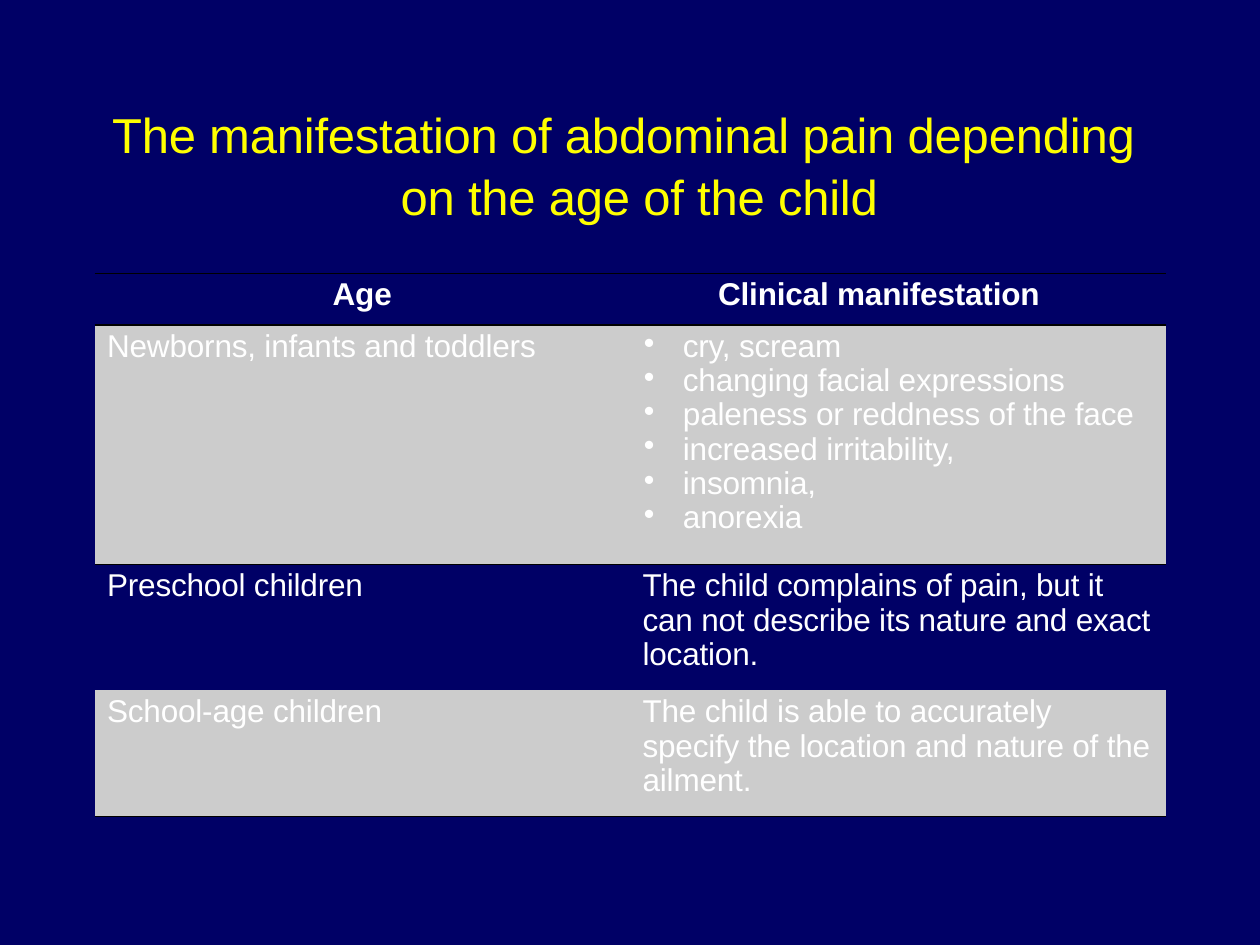
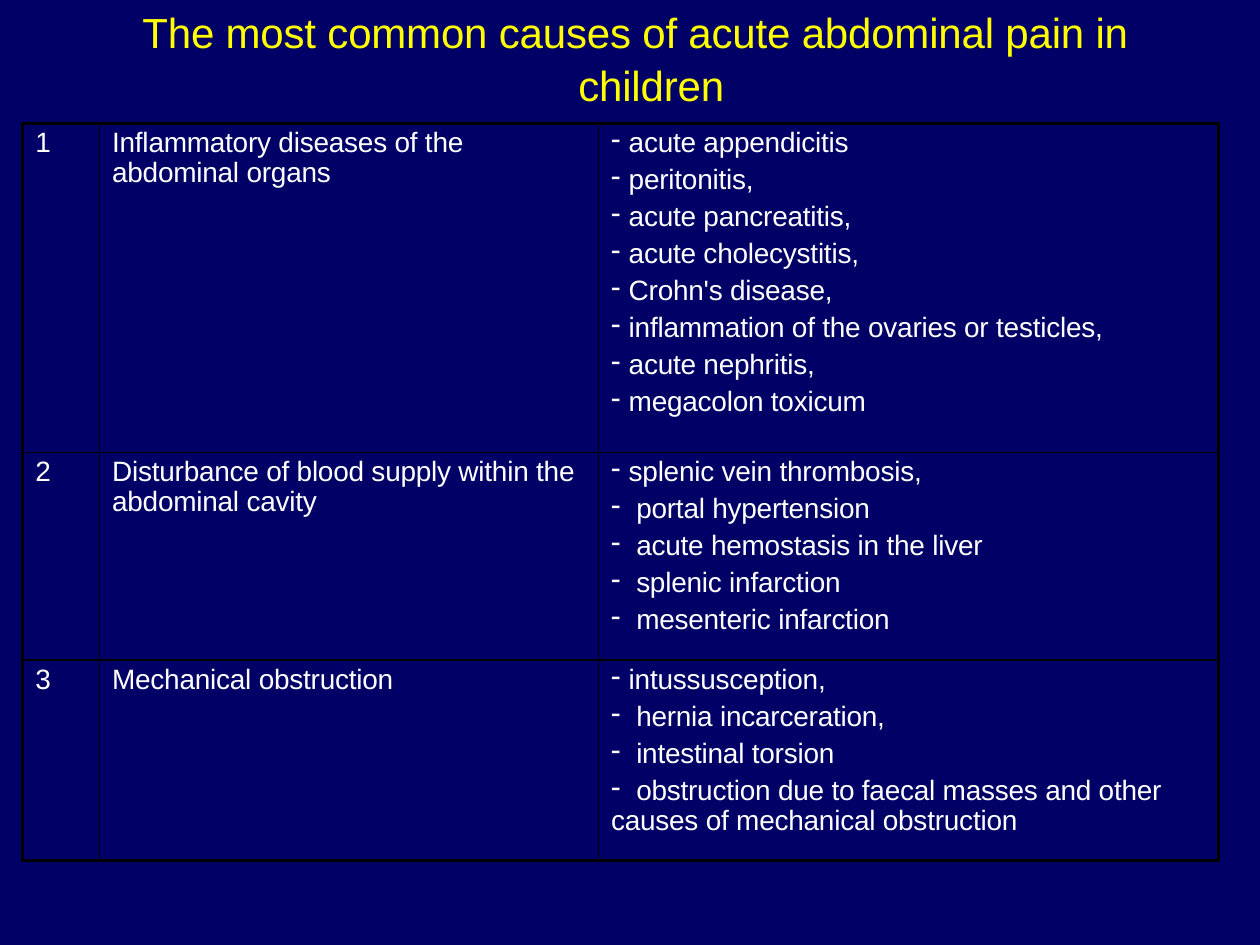
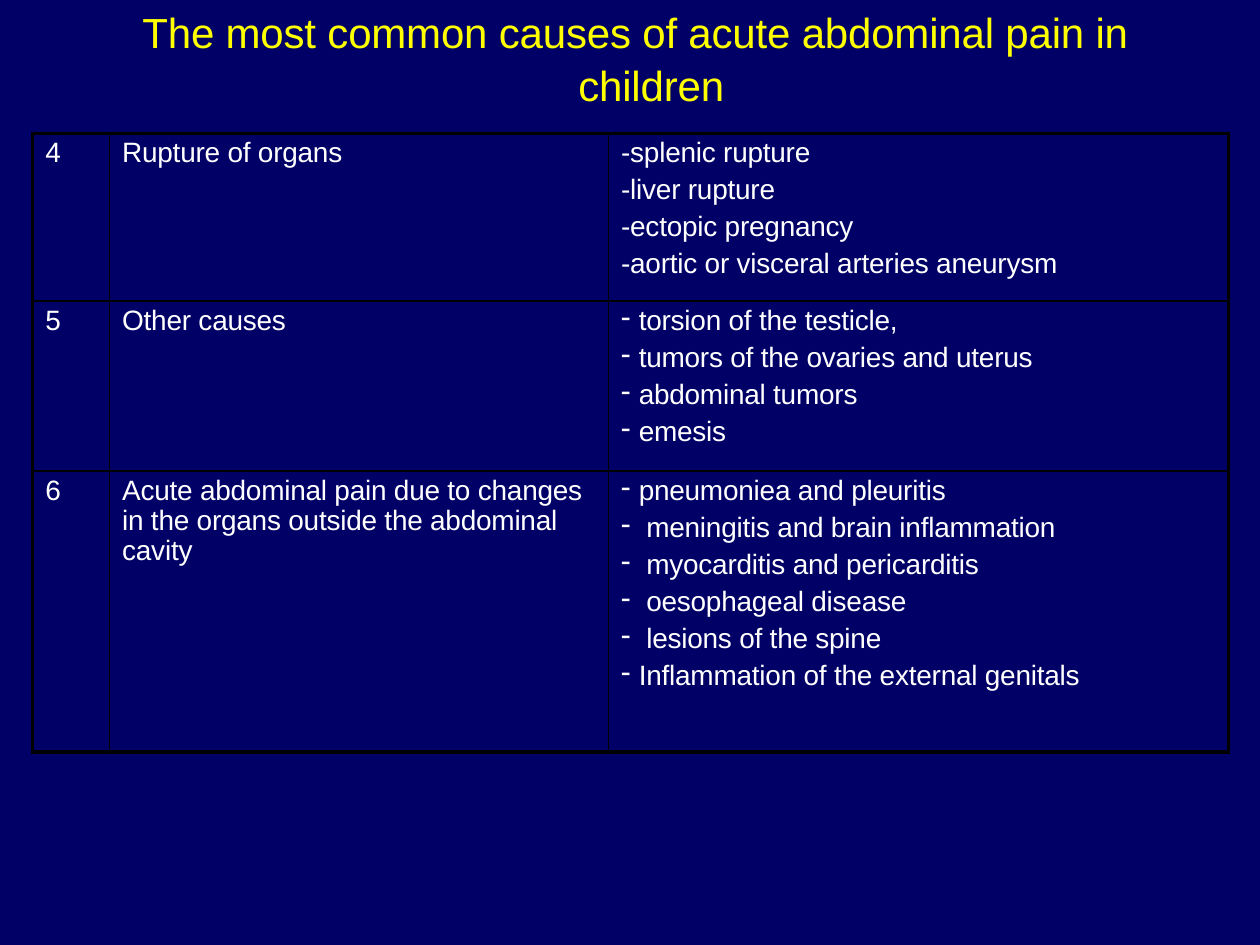
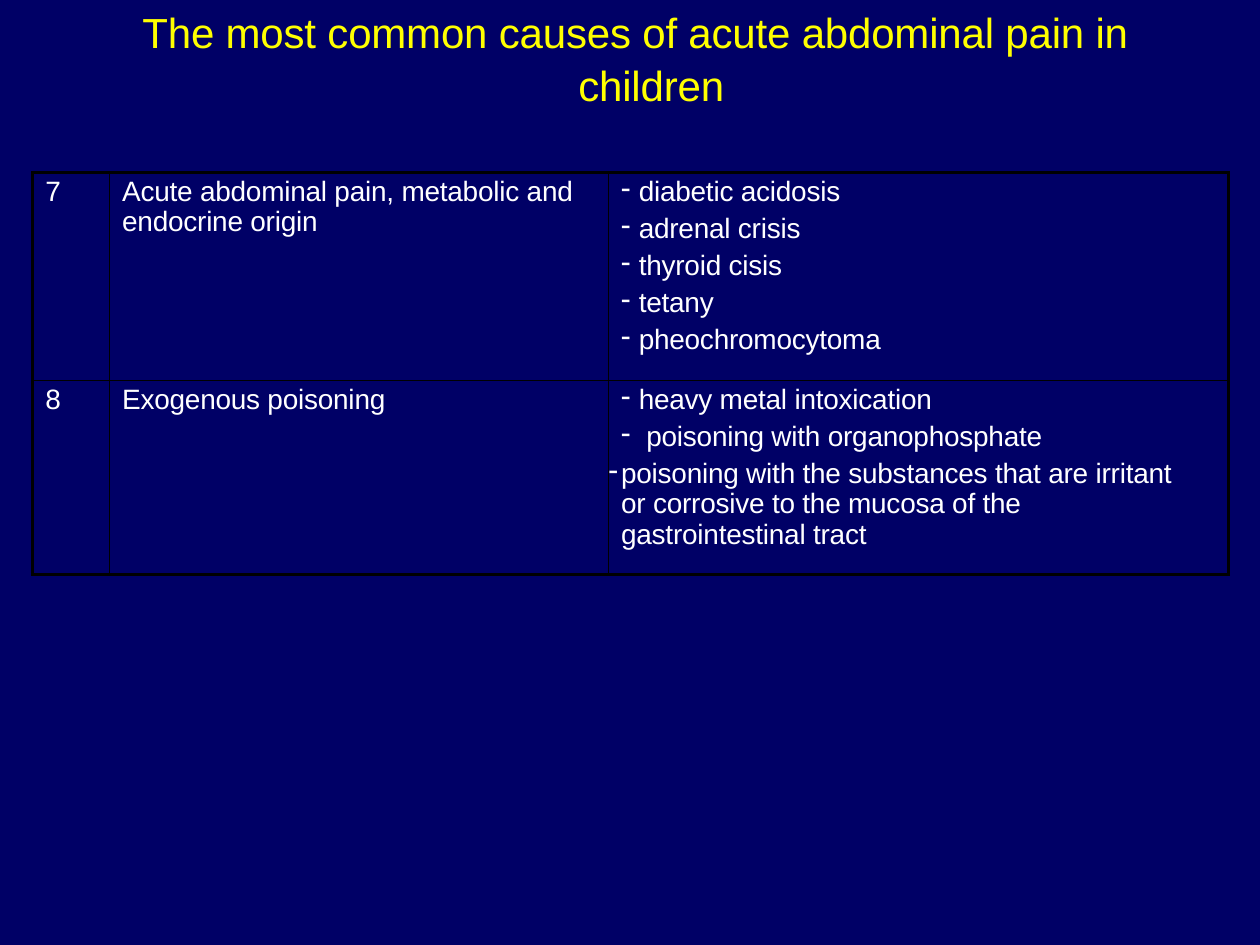
from dataclasses import dataclass
from typing import NamedTuple

from lxml import etree
from pptx import Presentation
from pptx.dml.color import RGBColor
from pptx.enum.text import MSO_ANCHOR, MSO_AUTO_SIZE, PP_ALIGN
from pptx.oxml.ns import qn
from pptx.util import Inches, Pt

LEFT, CENTER = PP_ALIGN.LEFT, PP_ALIGN.CENTER
TOP = MSO_ANCHOR.TOP
NO_AUTOFIT = MSO_AUTO_SIZE.NONE

NAVY, GREY, WHITE, YELLOW, BLACK = "000066", "CCCCCC", "FFFFFF", "FFFF00", "000000"
FONT = "Arial"
NO_GRID_STYLE = "{2D5ABB26-0587-4C30-8999-92F81FD0307C}"
THIN, THICK = 1, 2.25
FIRST_GAP, ITEM_GAP = 3.2, 3.9
CAUSE_COLUMNS = (0.61, 3.96, 4.92)
CAUSES_TITLE = "The most common causes of acute abdominal pain in children"


class Para(NamedTuple):
    text: str
    left: float = 0.1
    first: float = 0
    bullet: str = ""
    before: float = ITEM_GAP
    align: PP_ALIGN = LEFT
    bold: bool = False


class Borders(NamedTuple):
    """Line widths in points; 0 leaves a side without a line."""
    left: float = 0
    right: float = 0
    top: float = 0
    bottom: float = 0


class Title(NamedTuple):
    text: str
    box: tuple[float, float, float, float]
    size: int
    hang: float


@dataclass
class TableSpec:
    left: float
    top: float
    columns: tuple[float, ...]
    heights: tuple[float, ...]
    rows: list[list[list[Para]]]
    size: int
    last_margin: float


def dash(text: str) -> Para:
    return Para(text, 0.24, -0.14, "-")


def wide_dash(text: str) -> Para:
    return Para(text, 0.3, -0.2, "-")


def bullet(text: str) -> Para:
    return Para(text, 0.72, -0.31, "•", 0)


def cause(number: int, name: list[Para], items: list[Para]) -> list[list[Para]]:
    return [[Para(str(number))], name, items]


def rgb(color: str) -> RGBColor:
    return RGBColor.from_string(color)


def indent(p, left: float, first: float) -> None:
    pPr = p._p.get_or_add_pPr()
    pPr.set("marL", str(Inches(left)))
    pPr.set("indent", str(Inches(first)))


def format_runs(p, size: int, color: str, bold: bool = False) -> None:
    for r in p.runs:
        r.font.name = FONT
        r.font.size = Pt(size)
        r.font.bold = bold
        r.font.color.rgb = rgb(color)
        r._r.get_or_add_rPr().set("spc", "-10")


def add_title(slide, title: Title) -> None:
    sp = slide.shapes.title
    sp.left, sp.top, sp.width, sp.height = map(Inches, title.box)
    tf = sp.text_frame
    tf.text = title.text
    tf.auto_size = NO_AUTOFIT
    tf.vertical_anchor = TOP
    tf.margin_left = tf.margin_right = tf.margin_bottom = 0
    tf.margin_top = Inches(0.01)
    p = tf.paragraphs[0]
    p.alignment = LEFT
    p.line_spacing = 1.05
    p.space_before = Pt(1)
    indent(p, title.hang, 0.01 - title.hang)
    format_runs(p, title.size, YELLOW)


def fill_cell(cell, paras: list[Para], size: int) -> None:
    tf = cell.text_frame
    tf.text = "\n".join(para.text for para in paras)
    for i, (p, para) in enumerate(zip(tf.paragraphs, paras)):
        p.alignment = para.align
        p.line_spacing = 0.97
        p.space_before = Pt(para.before if i else FIRST_GAP)
        indent(p, para.left, para.first)
        if para.bullet:
            pPr = p._p.get_or_add_pPr()
            etree.SubElement(pPr, qn("a:buChar")).set("char", para.bullet)
        format_runs(p, size, WHITE, para.bold)


def set_borders(cell, borders: Borders) -> None:
    tcPr = cell._tc.get_or_add_tcPr()
    for side, width in zip("LRTB", borders):
        if width:
            ln = etree.SubElement(tcPr, qn(f"a:ln{side}"), w=str(Pt(width)))
            solid = etree.SubElement(ln, qn("a:solidFill"))
            etree.SubElement(solid, qn("a:srgbClr"), val=BLACK)


def age_look(row: int, col: int, n_rows: int, n_cols: int) -> tuple[str, Borders]:
    """Grey bands on odd rows, lines around the header and below the table."""
    borders = Borders(top=THIN if row < 2 else 0,
                      bottom=THIN if row in (0, n_rows - 1) else 0)
    return (GREY if row % 2 else NAVY), borders


def grid_look(row: int, col: int, n_rows: int, n_cols: int) -> tuple[str, Borders]:
    """Thick frame with a thin inner grid."""
    edges = (col == 0, col == n_cols - 1, row == 0, row == n_rows - 1)
    return NAVY, Borders(*(THICK if edge else THIN for edge in edges))


def add_table(slide, spec: TableSpec, look) -> None:
    n_rows, n_cols = len(spec.rows), len(spec.columns)
    frame = slide.shapes.add_table(n_rows, n_cols, Inches(spec.left), Inches(spec.top),
                                   Inches(sum(spec.columns)), Inches(sum(spec.heights)))
    table = frame.table
    table.first_row = table.horz_banding = False
    table._tbl.tblPr.find(qn("a:tableStyleId")).text = NO_GRID_STYLE
    for column, width in zip(table.columns, spec.columns):
        column.width = Inches(width)
    for i, (height, row) in enumerate(zip(spec.heights, spec.rows)):
        table.rows[i].height = Inches(height)
        for j, paras in enumerate(row):
            cell = table.cell(i, j)
            cell.margin_left = cell.margin_bottom = 0
            cell.margin_right = Inches(spec.last_margin if j == n_cols - 1 else 0.1)
            cell.margin_top = Inches(0.04)
            fill_cell(cell, paras, spec.size)
            color, borders = look(i, j, n_rows, n_cols)
            set_borders(cell, borders)
            cell.fill.solid()
            cell.fill.fore_color.rgb = rgb(color)


AGE_TITLE = Title("The manifestation of abdominal pain depending on the age of the child",
                  (0.88, 0.8, 8.23, 0.96), 28, 2.3)
CAUSE_TITLE = Title(CAUSES_TITLE, (1.12, 0.02, 7.92, 0.83), 24, 3.47)

AGE_ROWS = [
    [[Para("Age", 0.4, align=CENTER, bold=True)],
     [Para("Clinical manifestation", align=CENTER, bold=True)]],
    [[Para("Newborns, infants and toddlers")],
     [bullet(text) for text in (
         "cry, scream", "changing facial expressions", "paleness or reddness of the face",
         "increased irritability,", "insomnia,", "anorexia")]],
    [[Para("Preschool children")],
     [Para("The child complains of pain, but it can not describe its nature and "
           "exact location.", 0.4)]],
    [[Para("School-age children")],
     [Para("The child is able to accurately specify the location and nature of "
           "the ailment.", 0.4)]],
]

CAUSES_1_TO_3 = [
    cause(1, [Para("Inflammatory diseases of the abdominal organs")],
          [dash(text) for text in (
              "acute appendicitis", "peritonitis,", "acute pancreatitis,",
              "acute cholecystitis,", "Crohn's disease,",
              "inflammation of the ovaries or testicles,", "acute nephritis,",
              "megacolon toxicum")]),
    cause(2, [Para("Disturbance of blood supply within the"),
              Para("abdominal cavity", before=0)],
          [dash("splenic vein thrombosis,"), wide_dash("portal hypertension"),
           wide_dash("acute hemostasis in the liver"), wide_dash("splenic infarction"),
           wide_dash("mesenteric infarction")]),
    cause(3, [Para("Mechanical obstruction")],
          [dash("intussusception,"), wide_dash("hernia incarceration,"),
           wide_dash("intestinal torsion"),
           wide_dash("obstruction due to faecal masses and other"),
           Para("causes of mechanical obstruction", before=0)]),
]

CAUSES_4_TO_6 = [
    cause(4, [Para("Rupture of organs")],
          [Para(text) for text in (
              "-splenic rupture", "-liver rupture", "-ectopic pregnancy",
              "-aortic or visceral arteries aneurysm")]),
    cause(5, [Para("Other causes")],
          [dash(text) for text in (
              "torsion of the testicle,", "tumors of the ovaries and uterus",
              "abdominal tumors", "emesis")]),
    cause(6, [Para("Acute abdominal pain due to changes in the organs outside "
                   "the abdominal cavity")],
          [dash("pneumoniea and pleuritis"),
           wide_dash("meningitis and brain inflammation"),
           wide_dash("myocarditis and pericarditis"), wide_dash("oesophageal disease"),
           wide_dash("lesions of the spine"),
           dash("Inflammation of the external genitals")]),
]

CAUSES_7_TO_8 = [
    cause(7, [Para("Acute abdominal pain, metabolic and endocrine origin")],
          [dash(text) for text in (
              "diabetic acidosis", "adrenal crisis", "thyroid cisis", "tetany",
              "pheochromocytoma")]),
    cause(8, [Para("Exogenous poisoning")],
          [dash("heavy metal intoxication"), wide_dash("poisoning with organophosphate"),
           Para("poisoning with the substances that are irritant or corrosive to "
                "the mucosa of the gastrointestinal tract", 0.1, -0.1, "-")]),
]


def cause_table(left: float, top: float, heights: tuple[float, ...],
                rows: list[list[list[Para]]]) -> TableSpec:
    return TableSpec(left, top, CAUSE_COLUMNS, heights, rows, 16, 0.2)


SLIDES = [
    (AGE_TITLE, TableSpec(0.75, 2.17, (3.95, 4.55), (0.41, 1.9, 1, 1), AGE_ROWS, 18, 0.1),
     age_look),
    (CAUSE_TITLE, cause_table(0.18, 0.98, (2.61, 1.65, 1.59), CAUSES_1_TO_3), grid_look),
    (CAUSE_TITLE, cause_table(0.26, 1.06, (1.33, 1.35, 2.23), CAUSES_4_TO_6), grid_look),
    (CAUSE_TITLE, cause_table(0.26, 1.37, (1.65, 1.54), CAUSES_7_TO_8), grid_look),
]


def main() -> None:
    prs = Presentation()
    prs.slide_width, prs.slide_height = Inches(10), Inches(7.5)
    background = prs.slide_master.background.fill
    background.solid()
    background.fore_color.rgb = rgb(NAVY)
    title_only = prs.slide_layouts.get_by_name("Title Only")
    for title, table, look in SLIDES:
        slide = prs.slides.add_slide(title_only)
        add_title(slide, title)
        add_table(slide, table, look)
    prs.save("out.pptx")


if __name__ == "__main__":
    main()
